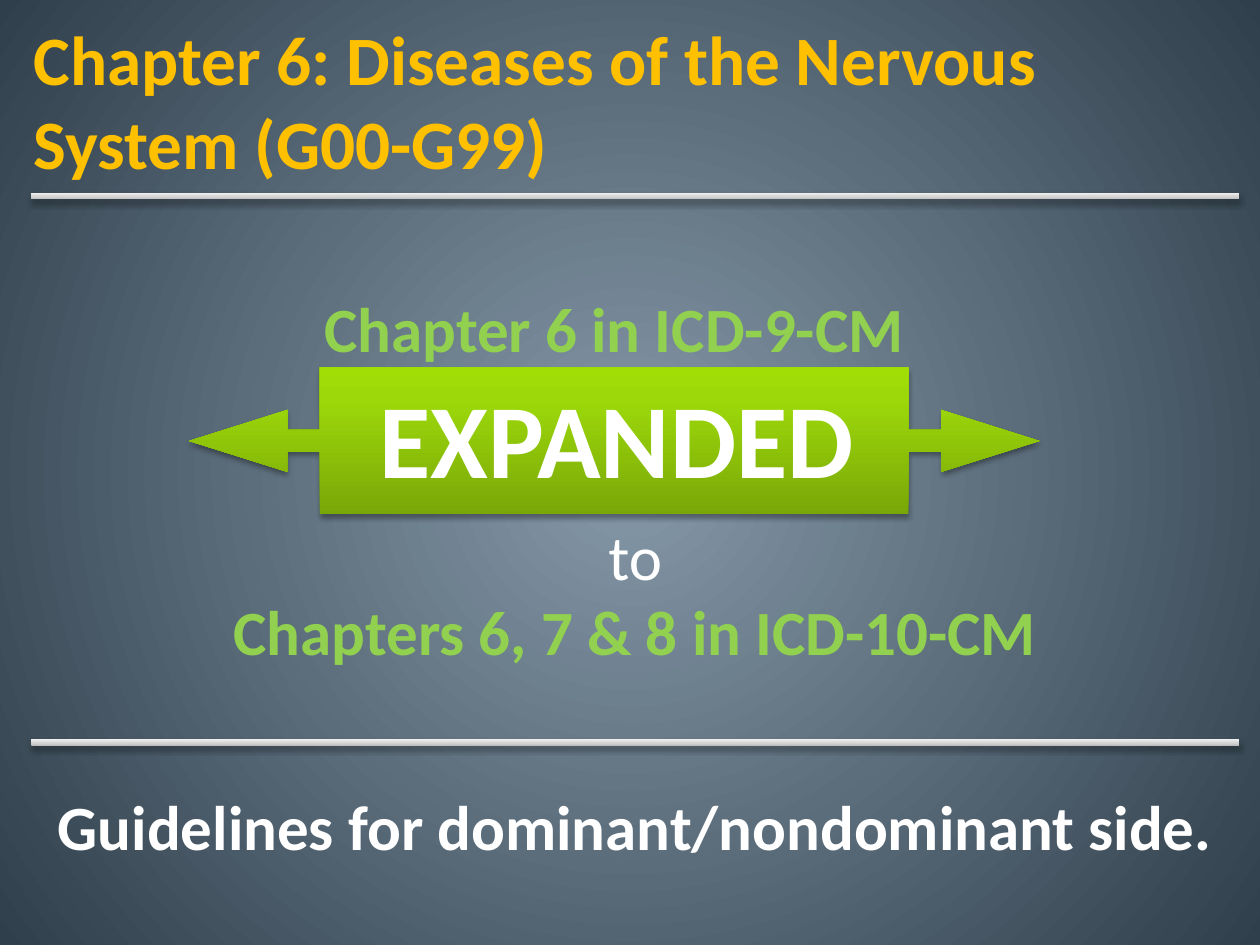
from lxml import etree
from pptx import Presentation
from pptx.dml.color import RGBColor
from pptx.enum import shapes, text
from pptx.oxml import parse_xml
from pptx.oxml.ns import nsdecls, qn
from pptx.util import Pt

GOLD, GREEN, WHITE = "FFC000", "92D050", "FFFFFF"
TITLE = ["Chapter 6: Diseases of the Nervous ", "System (G00-G99)"]
BEFORE = "Chapter 6 in ICD-9-CM"
CHANGE = "EXPANDED"
# text, colour, bold, space before
AFTER = [
    ("to", WHITE, False, 0),
    ("Chapters 6, 7 & 8 in ICD-10-CM", GREEN, True, 0),
    ("Guidelines for dominant/nondominant side.", WHITE, True, 68),
]

BACKDROP = [(0, "8699A9"), (100, "2F3F4B")]
SILVER = [(0, "BDBDBD"), (35, "D1D1D1"), (100, "EEEEEE")]
LIME = [(0, "79A708"), (80, "9DD90A"), (100, "A0DE06")]
UPWARD = '<a:lin ang="16200000" scaled="0"/>'
RADIAL = ('<a:path path="circle"><a:fillToRect l="50000" t="50000" '
          'r="50000" b="50000"/></a:path>')
RULE_TOPS = (110.3, 422.5)


def set_gradient(fill, parent, stops, direction):
    fill.gradient()
    old = next(parent.iter(qn("a:gradFill")))
    gs = "".join(f'<a:gs pos="{pos * 1000}"><a:srgbClr val="{c}"/></a:gs>'
                 for pos, c in stops)
    old.getparent().replace(old, parse_xml(
        f'<a:gradFill {nsdecls("a")} rotWithShape="1"><a:gsLst>{gs}</a:gsLst>'
        f'{direction}</a:gradFill>'))


def add_gradient_shape(kind, box, stops, alpha, blur, dist):
    sp = s.shapes.add_shape(kind, *map(Pt, box))
    set_gradient(sp.fill, sp.element.spPr, stops, UPWARD)
    sp.line.fill.background()
    sp.shadow.inherit = False
    effects = sp.element.spPr.find(qn("a:effectLst"))
    effects.append(parse_xml(
        f'<a:outerShdw {nsdecls("a")} blurRad="{Pt(blur)}" dist="{Pt(dist)}" '
        f'dir="5400000" rotWithShape="0"><a:srgbClr val="000000">'
        f'<a:alpha val="{alpha * 1000}"/></a:srgbClr></a:outerShdw>'))
    return sp


def add_run(p, words, color, size=36, bold=True):
    r = p.add_run()
    r.text = words
    r.font.name, r.font.size, r.font.bold = "Calibri", Pt(size), bold
    r.font.color.rgb = RGBColor.from_string(color)


def place(sp, box, anchor=text.MSO_ANCHOR.TOP, wrap=True):
    sp.left, sp.top, sp.width, sp.height = map(Pt, box)
    tf = sp.text_frame
    tf.word_wrap, tf.auto_size = wrap, text.MSO_AUTO_SIZE.NONE
    tf.vertical_anchor = anchor
    return tf


def add_text_box(box, wrap=True):
    return place(s.shapes.add_textbox(0, 0, 0, 0), box, wrap=wrap)


prs = Presentation()
prs.slide_width, prs.slide_height = Pt(720), Pt(540)
s = prs.slides.add_slide(prs.slide_layouts[1])
set_gradient(s.background.fill, s.element, BACKDROP, RADIAL)

for top in RULE_TOPS:
    add_gradient_shape(shapes.MSO_SHAPE.RECTANGLE, (18, top, 690, 3.6),
                       SILVER, 32, 3.5, 2.2)

callout = add_gradient_shape(shapes.MSO_SHAPE.LEFT_RIGHT_ARROW_CALLOUT,
                             (108, 210, 486, 84), LIME, 35, 3.1, 1.8)
for i, value in enumerate((0.149, 0.211, 0.669, 0.692)):
    callout.adjustments[i] = value

tf = add_text_box((210, 210, 288, 152.6), wrap=False)
add_run(tf.paragraphs[0], CHANGE, WHITE, 60)

tf = add_text_box((18, 292, 690, 228))
for i, (words, color, bold, gap) in enumerate(AFTER):
    p = tf.add_paragraph() if i else tf.paragraphs[0]
    p.alignment, p.space_before = text.PP_ALIGN.CENTER, Pt(gap)
    add_run(p, words, color, bold=bold)

p = place(s.placeholders[1], (12, 162, 678, 138)).paragraphs[0]
p.alignment, p.space_before = text.PP_ALIGN.CENTER, Pt(0)
pPr = p._p.get_or_add_pPr()
pPr.set("marL", "0")
pPr.set("indent", "0")
etree.SubElement(pPr, qn("a:buNone"))
add_run(p, BEFORE, GREEN)

p = place(s.shapes.title, (12, 12, 648, 90),
          text.MSO_ANCHOR.MIDDLE).paragraphs[0]
p.alignment = text.PP_ALIGN.LEFT
for i, line in enumerate(TITLE):
    if i:
        p.add_line_break()
    add_run(p, line, GOLD, 39.6)

prs.save("out.pptx")
